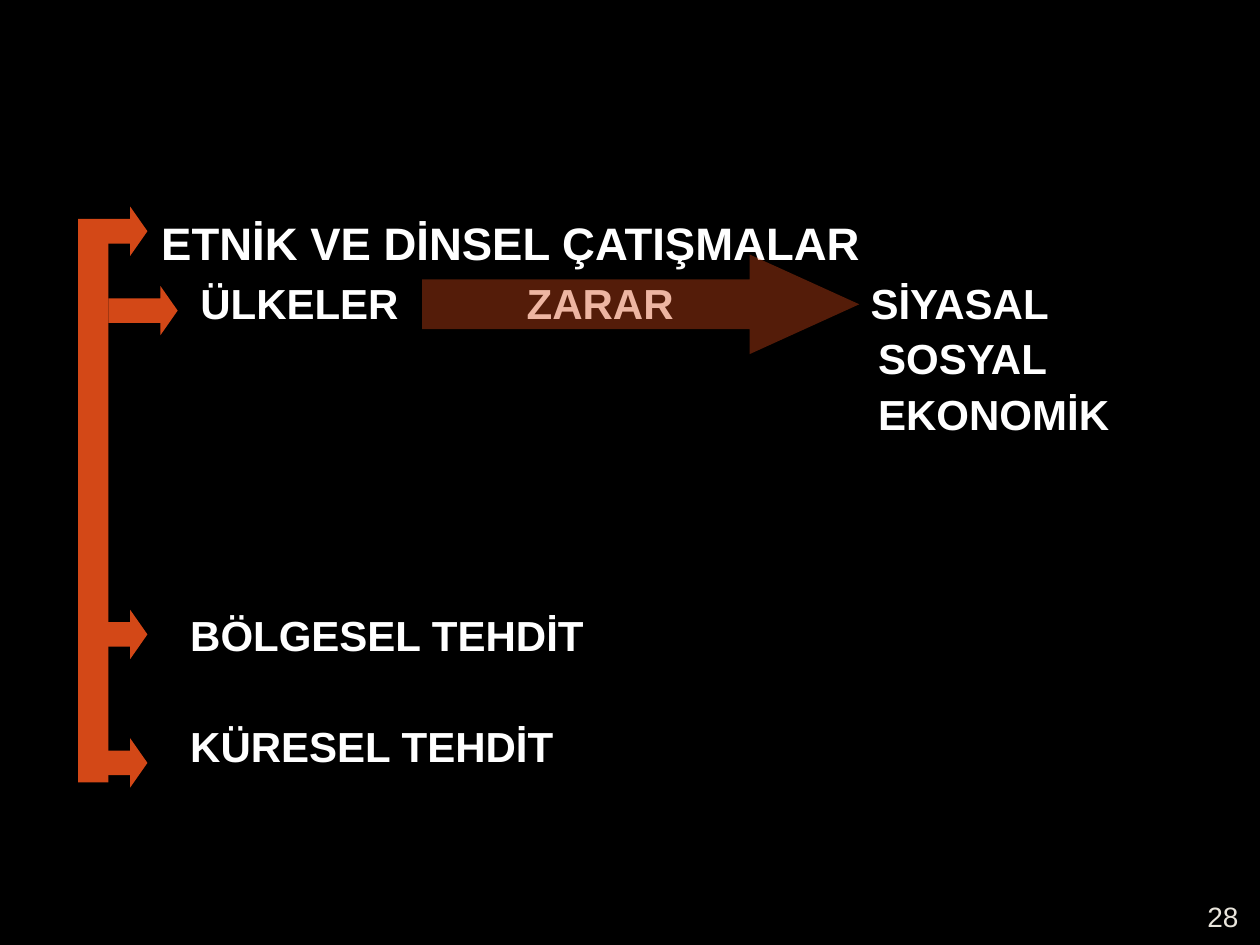
import pptx
import pptx.util
import pptx.dml.color
import pptx.enum.shapes
import pptx.enum.text
import lxml.etree
from pptx.util import Inches

THEME = {
    "font": "Arial",
    "background": "000000",
    "text": "FFFFFF",
    "number": "E9E5DC",
    "accent": "D34817",
    "heading_size": 26,
    "label_size": 24,
    "number_size": 16,
}

HEADING = ("ETNİK VE DİNSEL ÇATIŞMALAR", 1.28, 1.92, 6)
# text, left edge, row on the line grid, width
LABELS = [
    ("ÜLKELER", 1.59, 0, 1.7),
    ("ZARAR", 4.18, 0, 1.4),
    ("SİYASAL", 6.91, 0, 2.5),
    ("SOSYAL", 6.97, 1, 2.5),
    ("EKONOMİK", 6.97, 2, 2.5),
    ("BÖLGESEL TEHDİT", 1.51, 6, 5),
    ("KÜRESEL TEHDİT", 1.51, 8, 5),
]
PAGE_NUMBER = "28"

FIRST_ROW, ROW_PITCH, LINE_HEIGHT = 2.4, 0.44, 0.44
STEM = (0.62, 1.8, 0.24, 4.41)
BRANCH_SIZE = (0.55, 0.39)
BRANCHES = [(0.62, 5.86), (0.62, 4.84), (0.86, 2.27), (0.62, 1.64)]
HARM_ARROW = (3.35, 2.02, 3.47, 0.79)


def color(name):
    return pptx.dml.color.RGBColor.from_string(THEME[name])


def add_text(page, text, *, left, middle, width, height=LINE_HEIGHT,
             size="label_size", ink="text", bold=True, centered=False):
    """Place one line of text centred vertically on the height `middle`."""
    box = page.shapes.add_textbox(Inches(left), Inches(middle - height / 2),
                                  Inches(width), Inches(height))
    frame = box.text_frame
    frame.word_wrap = True
    frame.vertical_anchor = pptx.enum.text.MSO_ANCHOR.MIDDLE
    frame.margin_left = frame.margin_right = 0
    frame.margin_top = frame.margin_bottom = 0
    para = frame.paragraphs[0]
    if centered:
        para.alignment = pptx.enum.text.PP_ALIGN.CENTER
    span = para.add_run()
    span.text = text
    span.font.name = THEME["font"]
    span.font.size = pptx.util.Pt(THEME[size])
    span.font.bold = bold
    span.font.color.rgb = color(ink)


def add_block(page, kind, place, adjustments=(), opacity=100):
    shape = page.shapes.add_shape(kind, *map(Inches, place))
    shape.shadow.inherit = False
    shape.line.fill.background()
    shape.fill.solid()
    shape.fill.fore_color.rgb = color("accent")
    for index, value in enumerate(adjustments):
        shape.adjustments[index] = value
    if opacity < 100:
        tint = shape.fill._xPr.find(".//" + pptx.oxml.ns.qn("a:srgbClr"))
        alpha = lxml.etree.SubElement(tint, pptx.oxml.ns.qn("a:alpha"))
        alpha.set("val", str(opacity * 1000))


def main():
    deck = pptx.Presentation()
    deck.slide_width, deck.slide_height = Inches(10), Inches(7.5)
    page = deck.slides.add_slide(deck.slide_layouts[6])
    page.background.fill.solid()
    page.background.fill.fore_color.rgb = color("background")

    text, left, middle, width = HEADING
    add_text(page, text, left=left, middle=middle, width=width,
             size="heading_size")
    for text, left, row, width in LABELS:
        add_text(page, text, left=left, width=width,
                 middle=FIRST_ROW + row * ROW_PITCH)
    add_text(page, PAGE_NUMBER, left=9.45, middle=7.27, width=0.51, height=0.3,
             size="number_size", ink="number", bold=False, centered=True)

    kinds = pptx.enum.shapes.MSO_SHAPE
    add_block(page, kinds.RECTANGLE, STEM)
    for corner in BRANCHES:
        add_block(page, kinds.RIGHT_ARROW, corner + BRANCH_SIZE, (0.5, 0.35))
    add_block(page, kinds.RIGHT_ARROW, HARM_ARROW, (0.5, 1.1), opacity=40)

    deck.save("out.pptx")


if __name__ == "__main__":
    main()
